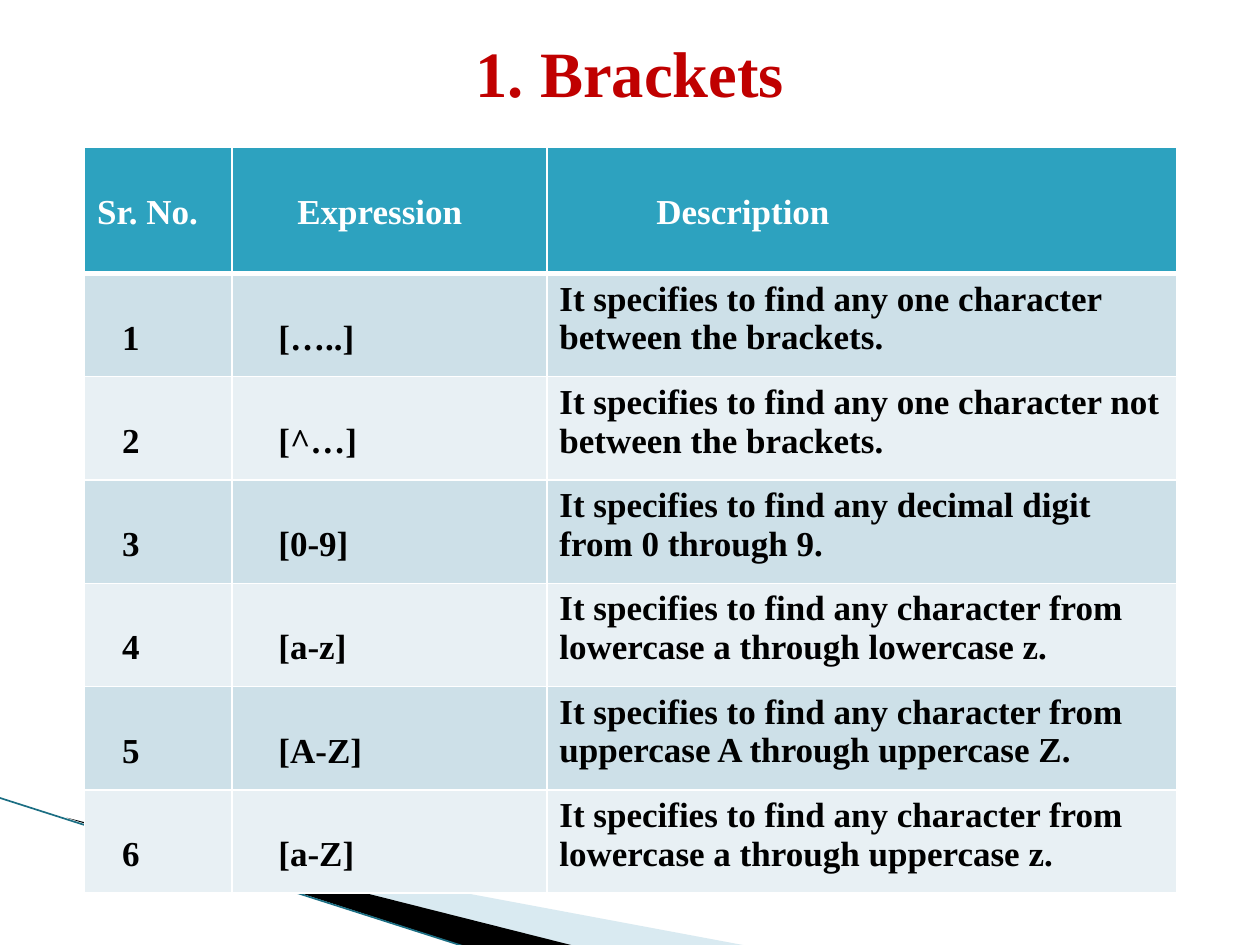
from lxml.etree import SubElement
from pptx import Presentation
from pptx.dml.color import RGBColor
from pptx.enum.shapes import MSO_CONNECTOR
from pptx.enum.text import MSO_ANCHOR, MSO_AUTO_SIZE, PP_ALIGN
from pptx.oxml.ns import qn
from pptx.util import Inches, Pt


def paint(fill, color, opacity=100):
    fill.solid()
    fill.fore_color.rgb = RGBColor.from_string(color)
    if opacity < 100:
        tint = fill._xPr.find(qn("a:solidFill"))[0]
        SubElement(tint, qn("a:alpha"), val=str(opacity * 1000))


def write(frame, text, color, size, align):
    frame.text = text
    frame.word_wrap = True
    font_format = {"name": "Times New Roman", "size": Pt(size), "bold": True}
    for para in frame.paragraphs:
        para.alignment = align
        for span in para.runs:
            for name, value in font_format.items():
                setattr(span.font, name, value)
            paint(span.font.fill, color)


deck = Presentation()
deck.slide_width, deck.slide_height = Inches(10), Inches(7.5)
page = deck.slides.add_slide(deck.slide_layouts[5])
paint(page.background.fill, "FFFFFF")

ribbons = [
    ("A0CBDC", 40, [(0.55, 6.5), (5.95, 7.51), (4.56, 7.51)]),
    ("000000", 100, [(0.53, 6.49), (4.57, 7.51), (3.72, 7.52)]),
]
for color, opacity, points in ribbons:
    corners = [(Inches(x), Inches(y)) for x, y in points]
    outline = page.shapes.build_freeform(*corners[0])
    outline.add_line_segments(corners[1:], close=True)
    ribbon = outline.convert_to_shape()
    ribbon.shadow.inherit = False
    ribbon.line.fill.background()
    paint(ribbon.fill, color, opacity)

edge = page.shapes.add_connector(
    MSO_CONNECTOR.STRAIGHT, Inches(-0.01), Inches(6.33), Inches(3.71), Inches(7.52)
)
edge.line.width = Pt(0.95)
paint(edge.line.fill, "1B6E83")
SubElement(edge._element.spPr, qn("a:effectLst"))

title = page.shapes.title
title_place = {"left": 0.5, "top": 0.3, "width": 9, "height": 0.53}
for name, value in title_place.items():
    setattr(title, name, Inches(value))
title.text_frame.auto_size = MSO_AUTO_SIZE.NONE
title.text_frame.vertical_anchor = MSO_ANCHOR.MIDDLE
write(title.text_frame, "1. Brackets", "C00000", 36.9, PP_ALIGN.CENTER)

rows = [
    ("Sr. No.", "Expression", "Description"),
    ("1", "[…..]", "It specifies to find any one character between the brackets."),
    ("2", "[^…]", "It specifies to find any one character not between the brackets."),
    ("3", "[0-9]", "It specifies to find any decimal digit from 0 through 9."),
    ("4", "[a-z]", "It specifies to find any character from lowercase a through lowercase z."),
    ("5", "[A-Z]", "It specifies to find any character from\nuppercase A through uppercase Z."),
    ("6", "[a-Z]", "It specifies to find any character from\nlowercase a through uppercase z."),
]
column_widths = [1.17, 2.5, 5]
row_heights = [1] + [0.82] * 6
header_indents = [0.1, 0.52, 0.87]
body_indents = [0.3, 0.37, 0.1]

grid = page.shapes.add_table(
    len(rows), len(column_widths), Inches(0.67), Inches(1.17),
    Inches(sum(column_widths)), Inches(sum(row_heights)),
).table
for column, width in zip(grid.columns, column_widths):
    column.width = Inches(width)
for row, height in zip(grid.rows, row_heights):
    row.height = Inches(height)

for r, texts in enumerate(rows):
    indents = body_indents if r else header_indents
    back = ("E8F0F4", "CDE0E8")[r % 2] if r else "2DA2BF"
    for c, text in enumerate(texts):
        cell = grid.cell(r, c)
        cell.margin_left = Inches(indents[c])
        cell.margin_top = Inches(0.05 if r and c == 2 else 0.36)
        cell.vertical_anchor = MSO_ANCHOR.TOP
        properties = cell._tc.get_or_add_tcPr()
        for side in "LRTB":
            heavy = (r == 0 and side == "B") or (r == 1 and side == "T")
            border = SubElement(properties, qn(f"a:ln{side}"), w=str(Pt(3 if heavy else 1)))
            SubElement(SubElement(border, qn("a:solidFill")), qn("a:srgbClr"), val="FFFFFF")
        paint(cell.fill, back)
        write(cell.text_frame, text, "000000" if r else "FFFFFF", 20, PP_ALIGN.LEFT)

deck.save("out.pptx")
